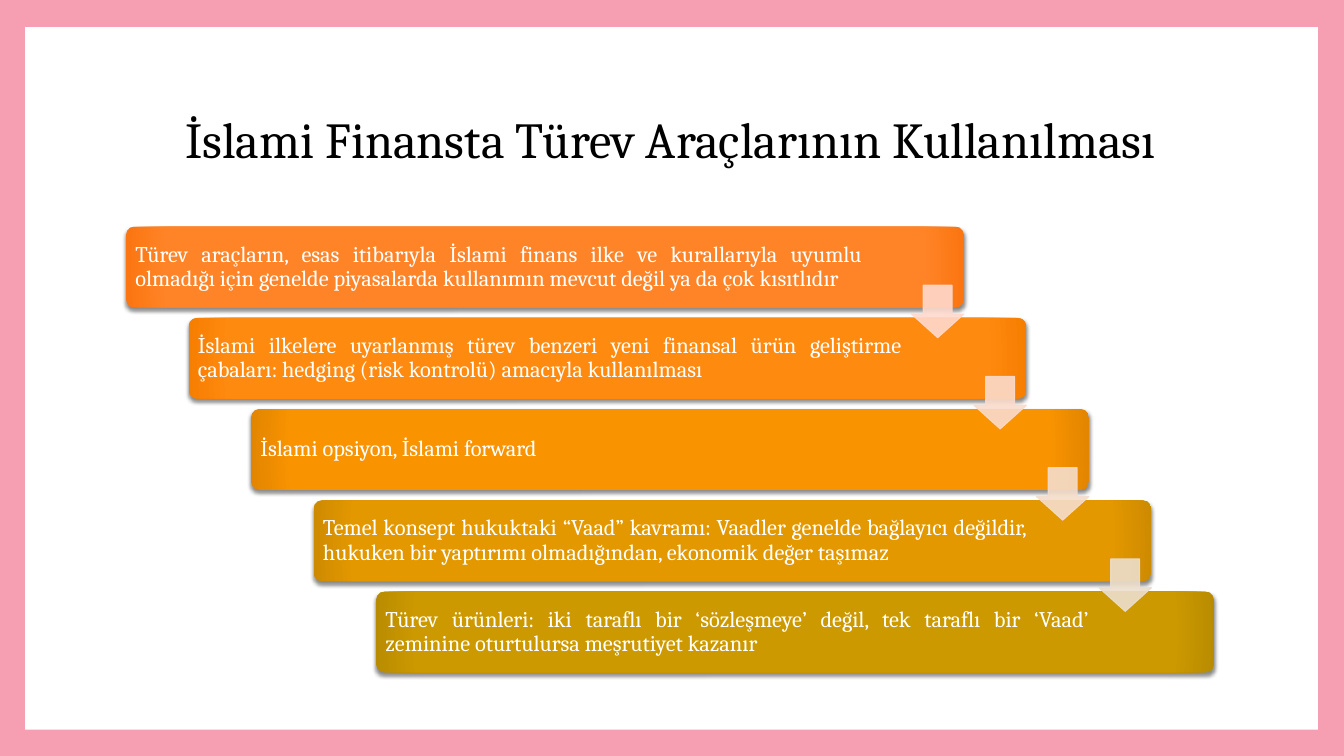
import pptx
import pptx.dml.color
import pptx.enum.shapes
import pptx.enum.text
import pptx.oxml
import pptx.oxml.ns
import pptx.util

RGBColor = pptx.dml.color.RGBColor
Shapes = pptx.enum.shapes.MSO_SHAPE
Align = pptx.enum.text.PP_ALIGN

PX = 9144  # 100 px to the inch
FONT = "Cambria"
PINK = RGBColor(0xF7, 0x9F, 0xB2)
WHITE = RGBColor(0xFF, 0xFF, 0xFF)
BLACK = RGBColor(0x00, 0x00, 0x00)

# Bar colour, bar edge colour, right text margin, text
STEPS = [
    (RGBColor(0xFF, 0x84, 0x27), RGBColor(0xFB, 0x75, 0x10), 98,
     "Türev araçların, esas itibarıyla İslami finans ilke ve kurallarıyla uyumlu "
     "olmadığı için genelde piyasalarda kullanımın mevcut değil ya da çok kısıtlıdır"),
    (RGBColor(0xFF, 0x8A, 0x10), RGBColor(0xF6, 0x7E, 0x00), 121,
     "İslami ilkelere uyarlanmış türev benzeri yeni finansal ürün geliştirme "
     "çabaları: hedging (risk kontrolü) amacıyla kullanılması"),
    (RGBColor(0xF9, 0x93, 0x00), RGBColor(0xE2, 0x85, 0x00), 121,
     "İslami opsiyon, İslami forward"),
    (RGBColor(0xE3, 0x98, 0x00), RGBColor(0xCE, 0x8A, 0x00), 121,
     "Temel konsept hukuktaki “Vaad” kavramı: Vaadler genelde bağlayıcı değildir, "
     "hukuken bir yaptırımı olmadığından, ekonomik değer taşımaz"),
    (RGBColor(0xCC, 0x99, 0x00), RGBColor(0xB9, 0x8B, 0x00), 121,
     "Türev ürünleri: iki taraflı bir ‘sözleşmeye’ değil, tek taraflı bir ‘Vaad’ "
     "zeminine oturtulursa meşrutiyet kazanır"),
]
ARROW_COLORS = [
    RGBColor(0xFF, 0xD9, 0xCD),
    RGBColor(0xFA, 0xDB, 0xCB),
    RGBColor(0xF4, 0xDD, 0xCB),
    RGBColor(0xEC, 0xDE, 0xCC),
]


def emu(*lengths):
    return [round(length * PX) for length in lengths]


def parse_drawing(xml):
    namespace = pptx.oxml.ns.nsdecls("a")
    return pptx.oxml.parse_xml(xml.replace(">", f" {namespace}>", 1))


def add_plain_shape(slide, kind, box, color):
    shape = slide.shapes.add_shape(kind, *emu(*box))
    shape.shadow.inherit = False
    shape.fill.solid()
    shape.fill.fore_color.rgb = color
    shape.line.fill.background()
    return shape


def write_text(shape, text, size, color, alignment):
    frame = shape.text_frame
    frame.word_wrap = True
    frame.vertical_anchor = pptx.enum.text.MSO_ANCHOR.MIDDLE
    paragraph = frame.paragraphs[0]
    paragraph.alignment = alignment
    paragraph.line_spacing = 0.9
    run = paragraph.add_run()
    run.text = text
    run.font.name = FONT
    run.font.size = pptx.util.Pt(size)
    run.font.color.rgb = color
    return frame


def shade_bar(bar, color, edge):
    """Give the bar darker ends and a soft shadow below."""
    stops = "".join(
        f'<a:gs pos="{position}"><a:srgbClr val="{shade}"/></a:gs>'
        for position, shade in ((0, color), (90000, color), (100000, edge)))
    gradient = parse_drawing(
        f'<a:gradFill rotWithShape="1"><a:gsLst>{stops}</a:gsLst><a:path path="circle">'
        '<a:fillToRect l="100000" t="100000" r="100000" b="100000"/></a:path></a:gradFill>')
    properties = bar.element.spPr
    properties.replace(properties.find(pptx.oxml.ns.qn("a:solidFill")), gradient)
    properties.find(pptx.oxml.ns.qn("a:effectLst")).append(parse_drawing(
        '<a:outerShdw blurRad="38100" dist="25400" dir="5400000" rotWithShape="0">'
        '<a:srgbClr val="000000"><a:alpha val="45000"/></a:srgbClr></a:outerShdw>'))


def add_bar(slide, box, color, edge, right_margin, text):
    bar = add_plain_shape(slide, Shapes.ROUNDED_RECTANGLE, box, color)
    bar.adjustments[0] = 0.1
    shade_bar(bar, color, edge)
    frame = write_text(bar, text, 16, WHITE, Align.JUSTIFY)
    frame.margin_left, frame.margin_top, frame.margin_right, frame.margin_bottom = emu(
        7, 7, right_margin, 7)


def add_arrow(slide, box, color):
    arrow = add_plain_shape(slide, Shapes.DOWN_ARROW, box, color)
    arrow.adjustments[0] = 0.55
    arrow.adjustments[1] = 0.45
    arrow.line.color.rgb = color
    arrow.line.width = pptx.util.Pt(0.79)
    for color_element in arrow.element.spPr.iter(pptx.oxml.ns.qn("a:srgbClr")):
        color_element.append(parse_drawing('<a:alpha val="90000"></a:alpha>'))


def add_staircase(slide, left, top, width, height):
    bar_width, bar_height, arrow_size = 831, 80, 52
    step_x = (width - bar_width) / (len(STEPS) - 1)
    step_y = (height - bar_height) / (len(STEPS) - 1)
    for index, step in enumerate(STEPS):
        box = (left + index * step_x, top + index * step_y, bar_width, bar_height)
        add_bar(slide, box, *step)
    # Each arrow ends flush with its bar and overlaps the next one
    for index, color in enumerate(ARROW_COLORS):
        arrow_left = left + index * step_x + bar_width - arrow_size
        arrow_top = top + index * step_y + 58
        add_arrow(slide, (arrow_left, arrow_top, arrow_size, arrow_size), color)


def add_title(slide, *box):
    title = slide.shapes.add_textbox(*emu(*box))
    write_text(title, "İslami Finansta Türev Araçlarının Kullanılması", 36, BLACK, Align.CENTER)


def add_backdrop(slide, *box):
    slide.background.fill.solid()
    slide.background.fill.fore_color.rgb = PINK
    add_plain_shape(slide, Shapes.RECTANGLE, box, WHITE)


def main():
    presentation = pptx.Presentation()
    presentation.slide_width, presentation.slide_height = emu(1333, 750)
    slide = presentation.slides.add_slide(presentation.slide_layouts[6])
    add_backdrop(slide, 25, 27, 1282, 697)
    add_title(slide, 125, 67, 1080, 148)
    add_staircase(slide, 125, 225, 1079, 442)
    presentation.save("out.pptx")


if __name__ == "__main__":
    main()
